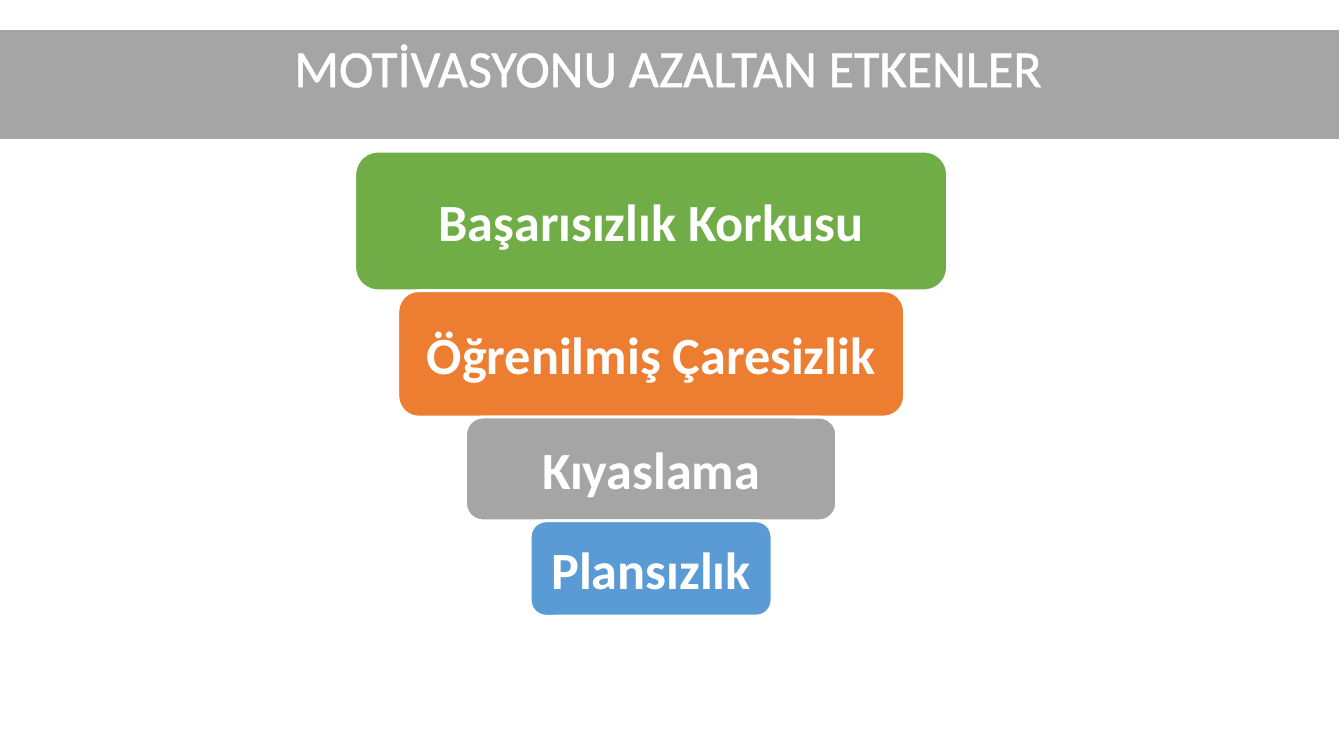
from dataclasses import dataclass

from lxml import etree
from pptx import Presentation, util as u
from pptx.dml.color import RGBColor
from pptx.enum import shapes, text
from pptx.oxml.ns import qn


@dataclass(frozen=True)
class Theme:
    font: str = "Calibri"
    size: float = 28
    border: float = 1.5
    glyph_outline: float = 1.45
    white: str = "FFFFFF"
    gray: str = "A5A5A5"
    green: str = "70AD47"
    orange: str = "ED7D31"
    blue: str = "5B9BD5"


THEME = Theme()
TITLE = "MOTİVASYONU AZALTAN ETKENLER"
# wording, colour, width and height as percentages of the funnel box
FACTORS = [
    ("Başarısızlık Korkusu", THEME.green, 100, 30),
    ("Öğrenilmiş Çaresizlik", THEME.orange, 85.5, 27.2),
    ("Kıyaslama", THEME.gray, 62.6, 22.3),
    ("Plansızlık", THEME.blue, 40.8, 20.5),
]


def place(shape, left, top, width, height):
    shape.left, shape.top = u.Inches(left), u.Inches(top)
    shape.width, shape.height = u.Inches(width), u.Inches(height)


def style_block(shape, wording, color, anchor, bold):
    """Fill and border the shape and set its centred white wording."""
    shape.fill.solid()
    shape.fill.fore_color.rgb = RGBColor.from_string(color)
    shape.line.color.rgb = RGBColor.from_string(THEME.white)
    shape.line.width = u.Pt(THEME.border)
    frame = shape.text_frame
    frame.text = wording
    frame.word_wrap = True
    frame.auto_size = text.MSO_AUTO_SIZE.NONE
    frame.vertical_anchor = anchor
    paragraph = frame.paragraphs[0]
    paragraph.alignment = text.PP_ALIGN.CENTER
    font = paragraph.runs[0].font
    font.name, font.size, font.bold = THEME.font, u.Pt(THEME.size), bold
    font.color.rgb = RGBColor.from_string(THEME.white)


def outline_glyphs(run):
    line = etree.Element(qn("a:ln"), w=str(u.Pt(THEME.glyph_outline)))
    fill = etree.SubElement(line, qn("a:solidFill"))
    etree.SubElement(fill, qn("a:srgbClr"), val=THEME.white)
    run.font._element.insert(0, line)


def title_band(slide, box):
    title = slide.shapes.title
    place(title, *box)
    style_block(title, TITLE, THEME.gray, text.MSO_ANCHOR.TOP, False)
    title.text_frame.auto_size = text.MSO_AUTO_SIZE.SHAPE_TO_FIT_TEXT
    outline_glyphs(title.text_frame.paragraphs[0].runs[0])


def funnel(slide, box):
    """Stack the factors, each centred in the box and narrower than the last."""
    left, top, width, height = box
    for wording, color, width_percent, height_percent in FACTORS:
        block_width = width * width_percent / 100
        block_height = height * height_percent / 100
        block = slide.shapes.add_shape(
            shapes.MSO_SHAPE.ROUNDED_RECTANGLE, 0, 0, 0, 0)
        block.shadow.inherit = False
        place(block, left + (width - block_width) / 2, top,
              block_width, block_height)
        style_block(block, wording, color, text.MSO_ANCHOR.MIDDLE, True)
        frame = block.text_frame
        frame.margin_left = frame.margin_right = u.Inches(0.05)
        top += block_height


def main():
    deck = Presentation()
    width = 10
    height = width * 9 / 16
    deck.slide_width, deck.slide_height = u.Inches(width), u.Inches(height)
    slide = deck.slides.add_slide(deck.slide_layouts.get_by_name("Title Only"))
    title_band(slide, (-0.03, 0.21, width, 0.57))
    funnel(slide, (2.64, 0.2 * height, 4.41, 3.46))
    deck.save("out.pptx")


if __name__ == "__main__":
    main()
